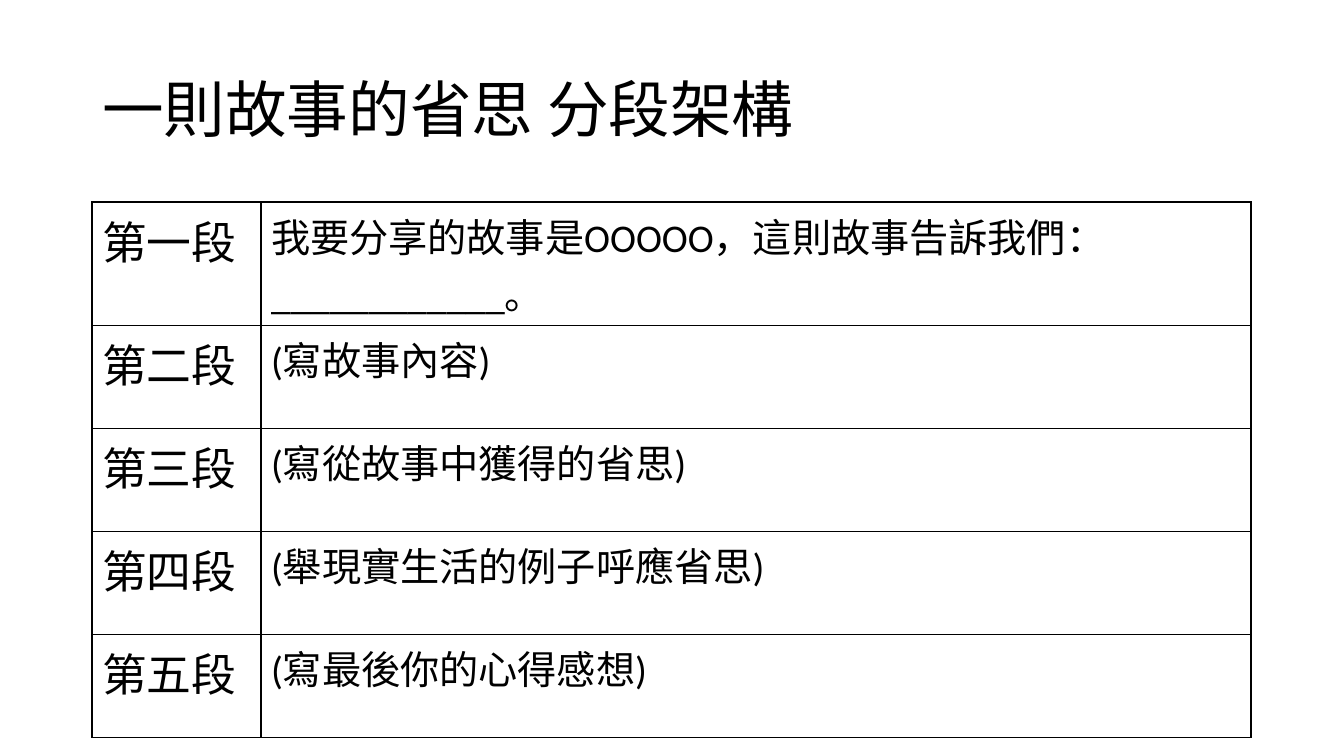
from lxml import etree
from pptx import Presentation
from pptx.dml.color import RGBColor
from pptx.enum.text import MSO_ANCHOR, MSO_AUTO_SIZE, PP_ALIGN
from pptx.oxml.ns import qn
from pptx.util import Pt

TITLE = "一則故事的省思 分段架構"
SECTIONS = [
    ("第一段", "我要分享的故事是OOOOO，這則故事告訴我們：____________。"),
    ("第二段", "(寫故事內容)"),
    ("第三段", "(寫從故事中獲得的省思)"),
    ("第四段", "(舉現實生活的例子呼應省思)"),
    ("第五段", "(寫最後你的心得感想)"),
]

BLACK = RGBColor(0, 0, 0)
FONT = "Calibri"
TITLE_SIZE = 44
COLUMN_SIZES = (32, 28)

SLIDE_SIZE = (1344, 756)
LEFT = 92
TITLE_TOP, TITLE_HEIGHT = 40, 146
TABLE_TOP, ROW_HEIGHT = 202, 103
COLUMN_WIDTHS = (169, 990)
BORDER_WIDTH = 1
TITLE_ONLY = 5
LEFT_ALIGN, MIDDLE, NO_FIT = PP_ALIGN.LEFT, MSO_ANCHOR.MIDDLE, MSO_AUTO_SIZE.NONE


def emu(px):
    return round(px * 914400 / 100.8)


def format_text(paragraph, size):
    paragraph.alignment = LEFT_ALIGN
    for name, value in {"name": FONT, "size": Pt(size), "bold": False}.items():
        setattr(paragraph.font, name, value)
    paragraph.font.color.rgb = BLACK


def add_borders(cell):
    properties = cell._tc.get_or_add_tcPr()
    for position, side in enumerate(("lnL", "lnR", "lnT", "lnB")):
        line = etree.Element(qn(f"a:{side}"), w=str(Pt(BORDER_WIDTH)))
        fill = etree.SubElement(line, qn("a:solidFill"))
        etree.SubElement(fill, qn("a:srgbClr"), val=str(BLACK))
        properties.insert(position, line)


def add_title(slide):
    title = slide.shapes.title
    title.left, title.top = emu(LEFT), emu(TITLE_TOP)
    title.width, title.height = emu(sum(COLUMN_WIDTHS)), emu(TITLE_HEIGHT)
    frame = title.text_frame
    frame.text = TITLE
    frame.auto_size = NO_FIT
    frame.vertical_anchor = MIDDLE
    frame.paragraphs[0].line_spacing = 0.9
    format_text(frame.paragraphs[0], TITLE_SIZE)


def add_sections(slide):
    table = slide.shapes.add_table(
        len(SECTIONS), len(COLUMN_WIDTHS), emu(LEFT), emu(TABLE_TOP),
        emu(sum(COLUMN_WIDTHS)), emu(ROW_HEIGHT * len(SECTIONS))).table
    table.first_row = table.horz_banding = False
    for column, width in zip(table.columns, COLUMN_WIDTHS):
        column.width = emu(width)
    for row, section in zip(table.rows, SECTIONS):
        row.height = emu(ROW_HEIGHT)
        for cell, text, size in zip(row.cells, section, COLUMN_SIZES):
            cell.text = text
            format_text(cell.text_frame.paragraphs[0], size)
            cell.fill.background()
            add_borders(cell)


def main():
    deck = Presentation()
    deck.slide_width, deck.slide_height = map(emu, SLIDE_SIZE)
    slide = deck.slides.add_slide(deck.slide_layouts[TITLE_ONLY])
    add_title(slide)
    add_sections(slide)
    deck.save("out.pptx")


if __name__ == "__main__":
    main()
